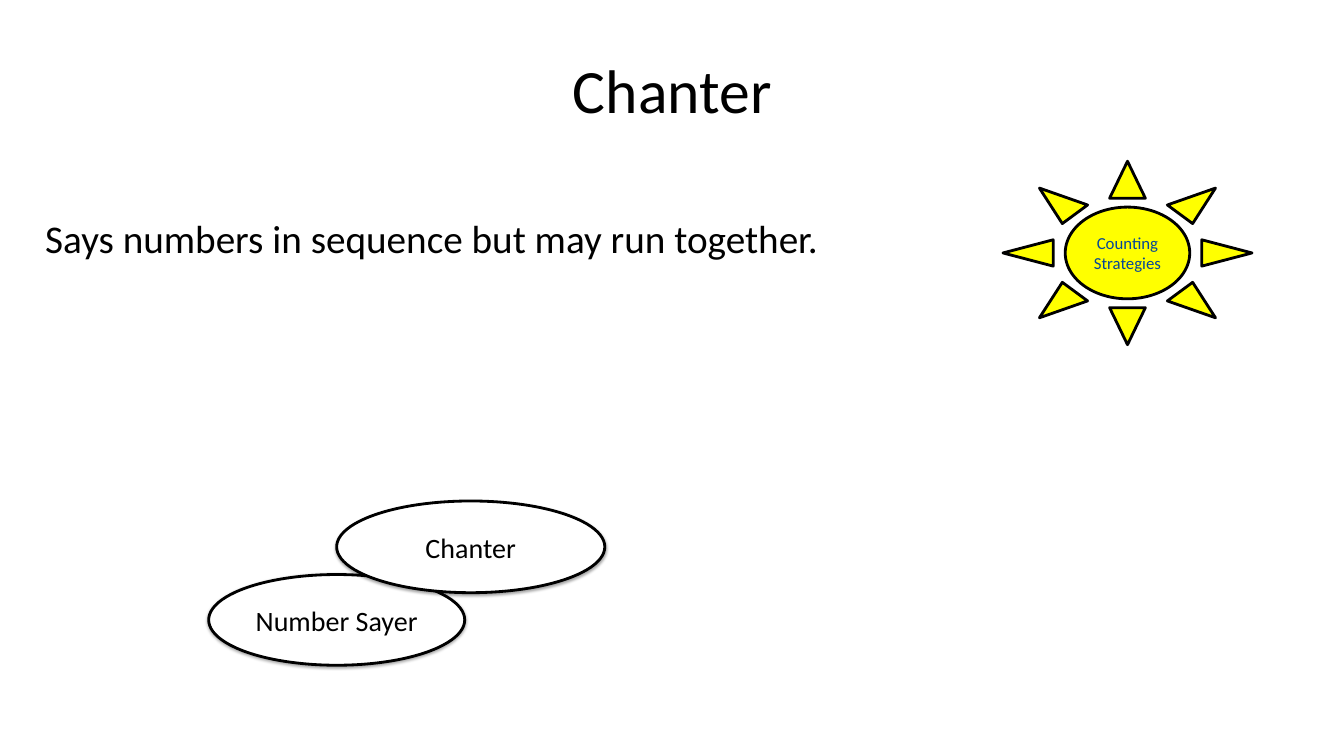
from dataclasses import dataclass

from lxml.etree import SubElement
from pptx import Presentation
from pptx.dml.color import RGBColor
from pptx.enum.shapes import MSO_SHAPE
from pptx.enum.text import MSO_ANCHOR, PP_ALIGN
from pptx.oxml.ns import qn
from pptx.util import Emu, Inches, Pt

SLIDE_WIDTH, SLIDE_HEIGHT = Inches(13.33), Inches(7.5)
FONT = "Calibri"
BLACK, WHITE, YELLOW, BLUE = "000000", "FFFFFF", "FFFF00", "054697"


@dataclass(frozen=True)
class Area:
    """A rectangle in percent of the slide's width and height."""
    left: float
    top: float
    width: float
    height: float

    def lengths(self) -> tuple[Emu, Emu, Emu, Emu]:
        return (Emu(int(SLIDE_WIDTH * self.left / 100)),
                Emu(int(SLIDE_HEIGHT * self.top / 100)),
                Emu(int(SLIDE_WIDTH * self.width / 100)),
                Emu(int(SLIDE_HEIGHT * self.height / 100)))


@dataclass(frozen=True)
class Figure:
    text: str
    preset: MSO_SHAPE
    area: Area
    fill: str
    text_color: str
    size: int
    shadow: bool


TITLE_AREA = Area(6.9, 5.33, 86.25, 14)
BODY_AREA = Area(0, 28.4, 80.48, 58.53)
FIGURES = [
    Figure("Number Sayer", MSO_SHAPE.OVAL, Area(15.53, 76, 19.05, 12),
           WHITE, BLACK, 20, True),
    Figure("Chanter", MSO_SHAPE.OVAL, Area(25.05, 66.27, 19.95, 12.13),
           WHITE, BLACK, 20, True),
    Figure("Counting\nStrategies", MSO_SHAPE.SUN, Area(74.63, 21.33, 18.53, 24.27),
           YELLOW, BLUE, 12, False),
]


def color(hex_code: str) -> RGBColor:
    return RGBColor.from_string(hex_code)


def place(shape, area: Area) -> None:
    shape.left, shape.top, shape.width, shape.height = area.lengths()


def write(text_frame, text: str, size: int, hex_code: str, alignment: PP_ALIGN,
          anchor: MSO_ANCHOR, line_spacing: float = 1.0) -> None:
    text_frame.text = text
    text_frame.word_wrap = True
    text_frame.vertical_anchor = anchor
    for paragraph in text_frame.paragraphs:
        paragraph.alignment = alignment
        paragraph.line_spacing = line_spacing
        for run in paragraph.runs:
            run.font.name = FONT
            run.font.size = Pt(size)
            run.font.color.rgb = color(hex_code)


def add_soft_shadow(shape) -> None:
    effects = shape._element.spPr.find(qn("a:effectLst"))
    shadow = SubElement(effects, qn("a:outerShdw"), blurRad=str(Pt(2)),
                        dist=str(Pt(1)), dir="5400000", rotWithShape="0")
    shade = SubElement(shadow, qn("a:srgbClr"), val=BLACK)
    SubElement(shade, qn("a:alpha"), val="35000")


def add_figure(slide, figure: Figure) -> None:
    shape = slide.shapes.add_shape(figure.preset, *figure.area.lengths())
    shape.shadow.inherit = False
    shape.fill.solid()
    shape.fill.fore_color.rgb = color(figure.fill)
    shape.line.color.rgb = color(BLACK)
    shape.line.width = Pt(2)
    if figure.shadow:
        add_soft_shadow(shape)
    frame = shape.text_frame
    frame.margin_left = frame.margin_right = Inches(0.04)
    frame.margin_top = frame.margin_bottom = Inches(0.04)
    write(frame, figure.text, figure.size, figure.text_color,
          PP_ALIGN.CENTER, MSO_ANCHOR.MIDDLE)


def main() -> None:
    presentation = Presentation()
    presentation.slide_width = SLIDE_WIDTH
    presentation.slide_height = SLIDE_HEIGHT
    slide = presentation.slides.add_slide(presentation.slide_layouts[5])

    # Title
    title = slide.shapes.title
    place(title, TITLE_AREA)
    write(title.text_frame, "Chanter", 44, BLACK, PP_ALIGN.CENTER,
          MSO_ANCHOR.MIDDLE, 0.9)

    # Definition, indented from the slide's edge
    body = slide.shapes.add_textbox(*BODY_AREA.lengths())
    write(body.text_frame, "Says numbers in sequence but may run together.", 28,
          BLACK, PP_ALIGN.LEFT, MSO_ANCHOR.TOP, 0.9)
    properties = body.text_frame.paragraphs[0]._p.get_or_add_pPr()
    properties.set("marL", str(Inches(0.35)))

    # Stage ovals and the sun
    for figure in FIGURES:
        add_figure(slide, figure)

    presentation.save("out.pptx")


if __name__ == "__main__":
    main()
